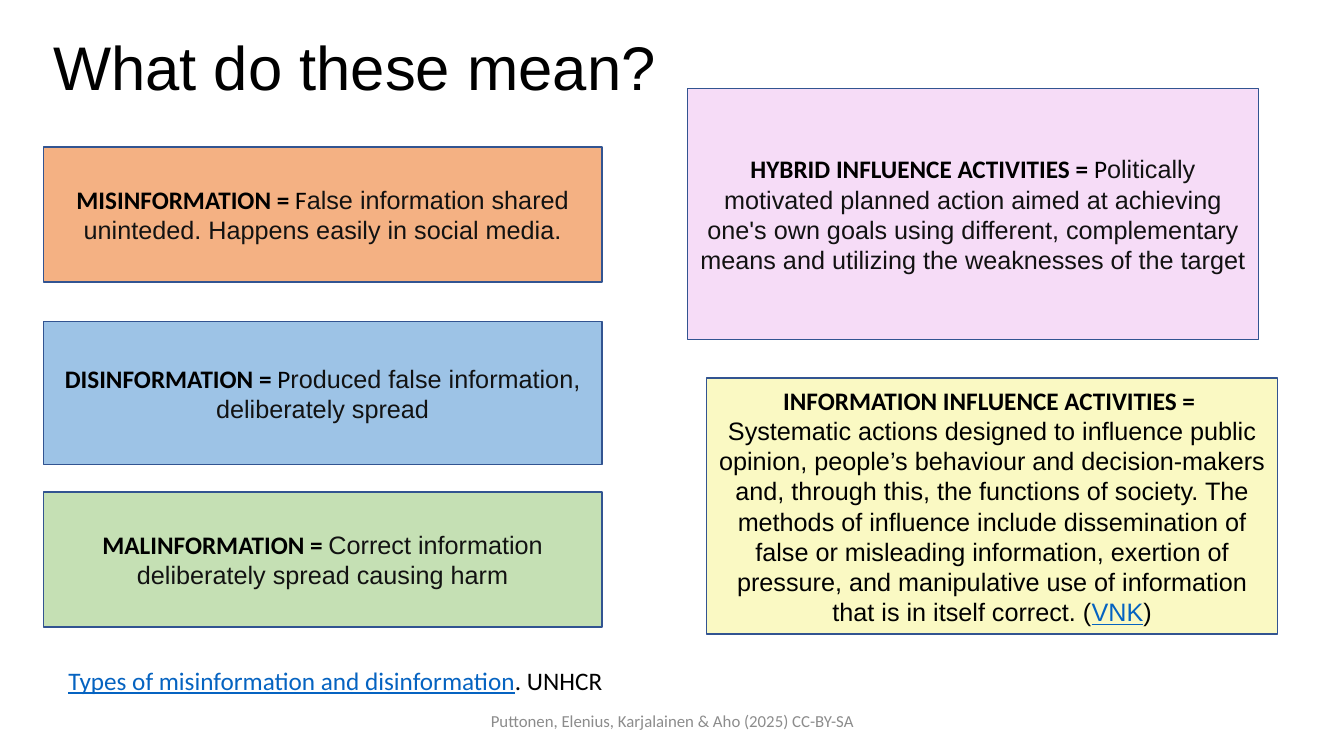
from dataclasses import dataclass

from pptx import Presentation
from pptx.dml.color import RGBColor
from pptx.enum.shapes import MSO_SHAPE
from pptx.enum.text import MSO_ANCHOR, PP_ALIGN
from pptx.util import Inches, Pt


@dataclass(frozen=True)
class Theme:
    """Colours, fonts and type sizes of the slide."""
    black: str = "000000"
    body: str = "121212"
    muted: str = "8C8C8C"
    link: str = "0563C1"
    outline: str = "325491"
    orange: str = "F4B183"
    blue: str = "9DC3E6"
    green: str = "C5E0B4"
    pink: str = "F6DCF7"
    yellow: str = "FAF9C3"
    sans: str = "Arial"
    label: str = "Calibri"
    title_size: int = 44
    text_size: int = 18
    footer_size: int = 12


THEME = Theme()


def add_run(paragraph, text, font=THEME.sans, color=THEME.body,
            size=THEME.text_size, bold=False, underline=False):
    """Append one formatted run to a paragraph."""
    run = paragraph.add_run()
    run.text = text
    run.font.name = font
    run.font.size = Pt(size)
    run.font.bold = bold
    run.font.underline = underline
    run.font.color.rgb = RGBColor.from_string(color)


def add_text(slide, left, top, width, height, anchor=MSO_ANCHOR.MIDDLE):
    """Add a wrapping text box and return its first paragraph."""
    box = slide.shapes.add_textbox(Inches(left), Inches(top), Inches(width), Inches(height))
    box.text_frame.word_wrap = True
    box.text_frame.vertical_anchor = anchor
    return box.text_frame.paragraphs[0]


def add_definition(slide, left, top, width, height, fill, term):
    """Add a filled box that opens with a bold term and return its text frame."""
    shape = slide.shapes.add_shape(
        MSO_SHAPE.RECTANGLE, Inches(left), Inches(top), Inches(width), Inches(height))
    shape.shadow.inherit = False
    shape.fill.solid()
    shape.fill.fore_color.rgb = RGBColor.from_string(fill)
    shape.line.color.rgb = RGBColor.from_string(THEME.outline)
    shape.line.width = Pt(1)
    frame = shape.text_frame
    frame.word_wrap = True
    frame.vertical_anchor = MSO_ANCHOR.MIDDLE
    paragraph = frame.paragraphs[0]
    paragraph.alignment = PP_ALIGN.CENTER
    add_run(paragraph, f"{term} = ", THEME.label, THEME.black, bold=True)
    return frame


def add_information_types(slide):
    """Add the left column with the three types of false or harmful information."""
    types = [
        (1.46, 1.34, THEME.orange, "MISINFORMATION", "F",
         "alse information shared uninteded. Happens easily in social media."),
        (3.19, 1.42, THEME.blue, "DISINFORMATION", "P",
         "roduced false information, deliberately spread"),
        (4.88, 1.34, THEME.green, "MALINFORMATION", "",
         "Correct information deliberately spread causing harm"),
    ]
    for top, height, fill, term, initial, meaning in types:
        paragraph = add_definition(slide, 0.43, top, 5.54, height, fill, term).paragraphs[0]
        if initial:
            add_run(paragraph, initial, THEME.label, THEME.black)
        add_run(paragraph, meaning)


def add_influence_activities(slide):
    """Add the right column with the two kinds of influence activities."""
    hybrid = add_definition(slide, 6.82, 0.88, 5.66, 2.49, THEME.pink,
                            "HYBRID INFLUENCE ACTIVITIES").paragraphs[0]
    add_run(hybrid, "P", THEME.label, THEME.black)
    add_run(hybrid, "olitically motivated planned action aimed at achieving one's own goals "
                    "using different, complementary means and utilizing the weaknesses "
                    "of the target")

    frame = add_definition(slide, 7.01, 3.75, 5.66, 2.54, THEME.yellow,
                           "INFORMATION INFLUENCE ACTIVITIES")
    meaning = frame.add_paragraph()
    meaning.alignment = PP_ALIGN.CENTER
    add_run(meaning, "Systematic actions designed to influence public opinion, people’s "
                     "behaviour and decision-makers and, through this, the functions of "
                     "society. The methods of influence include dissemination of false or "
                     "misleading information, exertion of pressure, and manipulative use of "
                     "information that is in itself correct. (", color=THEME.black)
    add_run(meaning, "VNK", color=THEME.link, underline=True)
    add_run(meaning, ")", color=THEME.black)


def main():
    """Build the slide and save it."""
    presentation = Presentation()
    presentation.slide_width = Inches(13.33)
    presentation.slide_height = Inches(7.5)
    slide = presentation.slides.add_slide(presentation.slide_layouts[6])

    title = add_text(slide, 0.43, 0.19, 11.5, 1.01)
    title.line_spacing = 0.9
    add_run(title, "What do these mean?", color=THEME.black, size=THEME.title_size)

    add_information_types(slide)
    add_influence_activities(slide)

    footer = add_text(slide, 4.42, 6.95, 4.5, 0.4)
    footer.alignment = PP_ALIGN.CENTER
    add_run(footer, "Puttonen, Elenius, Karjalainen & Aho (2025) CC-BY-SA",
            THEME.label, THEME.muted, THEME.footer_size)

    reference = add_text(slide, 0.58, 6.55, 8.89, 0.4, MSO_ANCHOR.TOP)
    add_run(reference, "Types of misinformation and disinformation",
            THEME.label, THEME.link, underline=True)
    add_run(reference, ". UNHCR", THEME.label, THEME.black)

    presentation.save("out.pptx")


if __name__ == "__main__":
    main()
